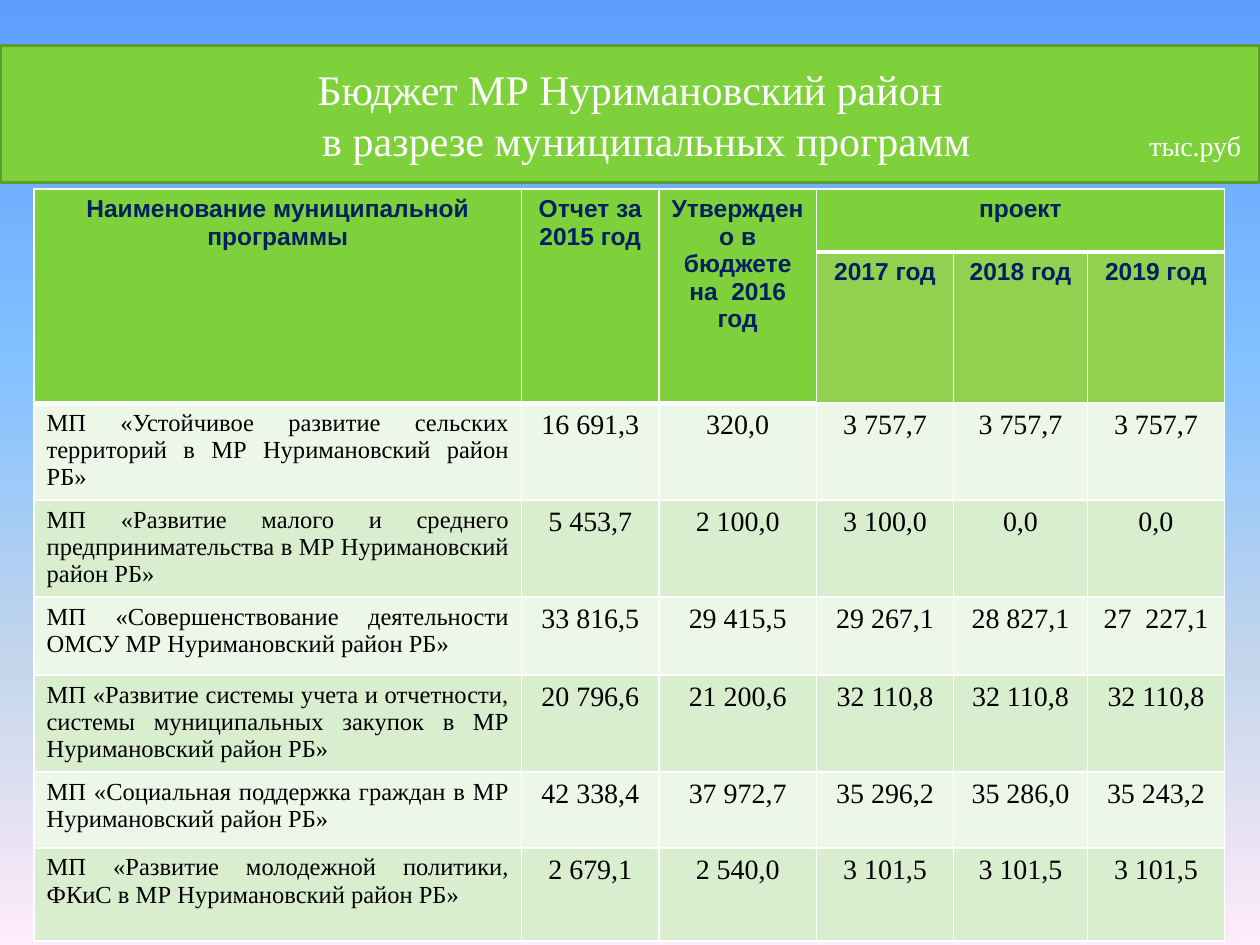
from dataclasses import dataclass

from lxml import etree
from pptx import Presentation
from pptx.dml.color import RGBColor
from pptx.enum.text import MSO_ANCHOR, MSO_AUTO_SIZE, PP_ALIGN
from pptx.oxml.ns import qn
from pptx.util import Inches, Pt

CENTER, JUSTIFY, LEFT = PP_ALIGN.CENTER, PP_ALIGN.JUSTIFY, PP_ALIGN.LEFT


@dataclass(frozen=True)
class Theme:
    green: str = "7FD13B"
    dark_green: str = "5E9B2C"
    year_green: str = "92D050"
    bands: tuple = ("ECF7E8", "D8EECE")
    navy: str = "002060"
    black: str = "000000"
    white: str = "FFFFFF"
    sky: tuple = ((0, "5E9EFF"), (40, "85C2FF"), (70, "C4D6EB"), (100, "FFEBFA"))
    serif: str = "Times New Roman"
    sans: str = "Arial"
    title_size: int = 24
    value_size: int = 16
    label_size: int = 14
    thin: int = 1
    thick: int = 3


THEME = Theme()

HEADING = "Бюджет МР Нуримановский район"
SUBHEADING = "в разрезе муниципальных программ"
UNIT = "тыс.руб"
HEADERS = ["Наименование муниципальной программы", "Отчет за 2015 год",
           "Утверждено в бюджете на  2016 год", "проект"]
YEARS = ["2017 год", "2018 год", "2019 год"]
PROGRAMS = [
    ("МП «Устойчивое развитие сельских территорий в МР Нуримановский район РБ»",
     "16 691,3", "320,0", "3 757,7", "3 757,7", "3 757,7"),
    ("МП «Развитие малого и среднего предпринимательства в МР Нуримановский район РБ»",
     "5 453,7", "2 100,0", "3 100,0", "0,0", "0,0"),
    ("МП «Совершенствование деятельности ОМСУ МР Нуримановский район РБ»",
     "33 816,5", "29 415,5", "29 267,1", "28 827,1", "27  227,1"),
    ("МП «Развитие системы учета и отчетности, системы муниципальных закупок "
     "в МР Нуримановский район РБ»",
     "20 796,6", "21 200,6", "32 110,8", "32 110,8", "32 110,8"),
    ("МП «Социальная поддержка граждан в МР Нуримановский район РБ»",
     "42 338,4", "37 972,7", "35 296,2", "35 286,0", "35 243,2"),
    ("МП «Развитие молодежной политики, ФКиС в МР Нуримановский район РБ»",
     "2 679,1", "2 540,0", "3 101,5", "3 101,5", "3 101,5"),
]

SLIDE_WIDTH, SLIDE_HEIGHT = 10, 7.5
BANNER_TOP, BANNER_HEIGHT = 0.36, 1.09
TABLE_LEFT, TABLE_TOP = 0.27, 1.5
COLUMN_WIDTHS = [3.87, 1.09, 1.25, 1.09, 1.06, 1.09]
ROW_HEIGHTS = [0.5, 1.2, 0.77, 0.77, 0.62, 0.77, 0.6, 0.74]
HEADER_ROWS = 2
FIRST_YEAR = len(HEADERS) - 1
TITLE_TABS = [(5.03, "ctr"), (9.75, "r")]


def style_runs(paragraph, font_name, size, color, bold=False):
    for run in paragraph.runs:
        run.font.name = font_name
        run.font.size = Pt(size)
        run.font.bold = bold
        run.font.color.rgb = RGBColor.from_string(color)


def add_color(parent, color):
    etree.SubElement(parent, qn("a:srgbClr"), val=color)


def paint_sky(slide):
    fill = slide.background.fill
    fill.gradient()
    fill.gradient_angle = 270
    stops = slide.element.find(".//" + qn("a:gsLst"))
    for stop in list(stops):
        stops.remove(stop)
    for percent, color in THEME.sky:
        add_color(etree.SubElement(stops, qn("a:gs"), pos=str(percent * 1000)), color)


def add_banner(slide):
    banner = slide.shapes.title
    banner.left, banner.top = 0, Inches(BANNER_TOP)
    banner.width, banner.height = Inches(SLIDE_WIDTH), Inches(BANNER_HEIGHT)
    banner.fill.solid()
    banner.fill.fore_color.rgb = RGBColor.from_string(THEME.green)
    banner.line.color.rgb = RGBColor.from_string(THEME.dark_green)
    banner.line.width = Pt(2)
    frame = banner.text_frame
    frame.auto_size = MSO_AUTO_SIZE.NONE
    frame.vertical_anchor = MSO_ANCHOR.MIDDLE
    frame.text = f"{HEADING}\n\t{SUBHEADING}"
    heading, subheading = frame.paragraphs
    heading.alignment, subheading.alignment = CENTER, LEFT
    tabs = etree.SubElement(subheading._p.get_or_add_pPr(), qn("a:tabLst"))
    for position, kind in TITLE_TABS:
        etree.SubElement(tabs, qn("a:tab"), pos=str(Inches(position)), algn=kind)
    subheading.add_run().text = f"\t{UNIT}"
    for paragraph in frame.paragraphs:
        style_runs(paragraph, THEME.serif, THEME.title_size, THEME.white)
    subheading.runs[-1].font.size = Pt(THEME.value_size)


def is_header_end(row, column):
    return row == (0 if column >= FIRST_YEAR else HEADER_ROWS - 1)


def format_cell(cell, row, column, fill):
    edges = {
        "L": THEME.thin,
        "R": THEME.thin,
        "T": THEME.thick if is_header_end(row - 1, column) else THEME.thin,
        "B": THEME.thick if is_header_end(row, column) else THEME.thin,
    }
    properties = cell._tc.get_or_add_tcPr()
    for side, width in edges.items():
        border = etree.SubElement(properties, qn(f"a:ln{side}"), w=str(Pt(width)))
        add_color(etree.SubElement(border, qn("a:solidFill")), THEME.white)
    cell.fill.solid()
    cell.fill.fore_color.rgb = RGBColor.from_string(fill)
    paragraph = cell.text_frame.paragraphs[0]
    if row < HEADER_ROWS:
        paragraph.alignment = CENTER
        style_runs(paragraph, THEME.sans, THEME.label_size, THEME.navy, bold=True)
    else:
        paragraph.alignment = CENTER if column else JUSTIFY
        size = THEME.value_size if column else THEME.label_size
        style_runs(paragraph, THEME.serif, size, THEME.black)


def cell_fill(row, column):
    if row >= HEADER_ROWS:
        return THEME.bands[(row - HEADER_ROWS) % len(THEME.bands)]
    return THEME.year_green if row and column >= FIRST_YEAR else THEME.green


def add_budget_table(slide):
    table = slide.shapes.add_table(
        len(ROW_HEIGHTS), len(COLUMN_WIDTHS), Inches(TABLE_LEFT), Inches(TABLE_TOP),
        Inches(sum(COLUMN_WIDTHS)), Inches(sum(ROW_HEIGHTS))).table
    table.first_row = table.horz_banding = False
    for column, width in zip(table.columns, COLUMN_WIDTHS):
        column.width = Inches(width)
    for row, height in zip(table.rows, ROW_HEIGHTS):
        row.height = Inches(height)
    for column in range(FIRST_YEAR):
        table.cell(0, column).merge(table.cell(HEADER_ROWS - 1, column))
    table.cell(0, FIRST_YEAR).merge(table.cell(0, len(COLUMN_WIDTHS) - 1))

    year_row = [""] * FIRST_YEAR + YEARS
    header_row = HEADERS + [""] * (len(YEARS) - 1)
    for row, texts in enumerate([header_row, year_row, *PROGRAMS]):
        for column, text in enumerate(texts):
            cell = table.cell(row, column)
            if text:
                cell.text_frame.text = text
            format_cell(cell, row, column, cell_fill(row, column))


def main():
    presentation = Presentation()
    presentation.slide_width = Inches(SLIDE_WIDTH)
    presentation.slide_height = Inches(SLIDE_HEIGHT)
    slide = presentation.slides.add_slide(presentation.slide_layouts[5])
    paint_sky(slide)
    add_banner(slide)
    add_budget_table(slide)
    presentation.save("out.pptx")


if __name__ == "__main__":
    main()
